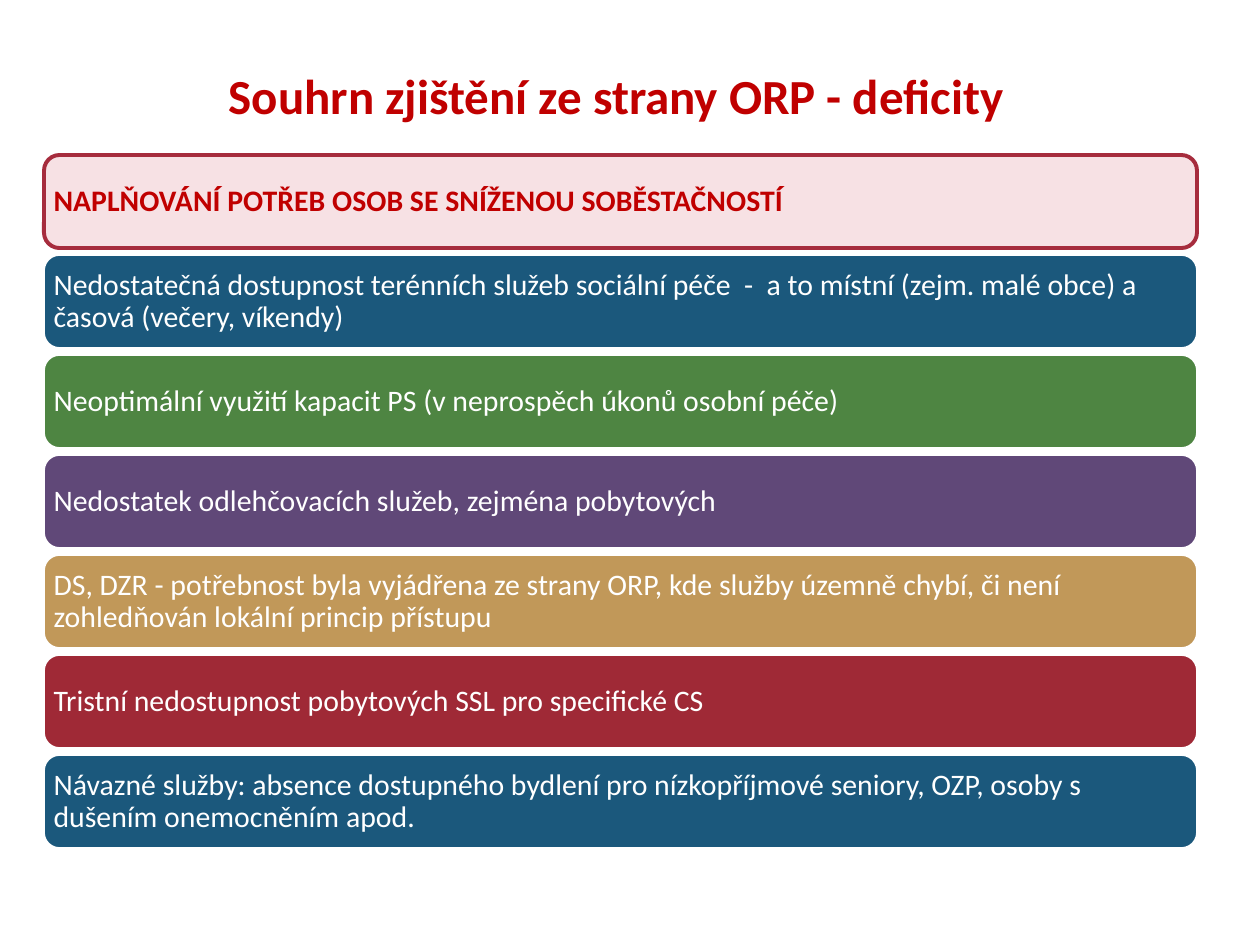
from dataclasses import dataclass

from pptx import Presentation
from pptx.dml.color import RGBColor as Color
from pptx.enum.shapes import MSO_SHAPE as Shape
from pptx.enum.text import MSO_ANCHOR as Anchor, PP_ALIGN as Align
from pptx.util import Emu, Pt

PX_PER_INCH = 126


@dataclass(frozen=True)
class Theme:
    font: str = "Calibri"
    title_size: int = 28
    bar_size: int = 17
    line_spacing: float = 0.9
    accent: str = "C00000"
    white: str = "FFFFFF"
    pink: str = "F7E1E4"
    crimson: str = "A62C3D"
    blue: str = "1B587C"
    green: str = "4E8542"
    purple: str = "604878"
    sand: str = "C19859"
    red: str = "9F2936"


THEME = Theme()

TITLE = "Souhrn zjištění ze strany ORP - deficity"
HEADING = "NAPLŇOVÁNÍ POTŘEB OSOB SE SNÍŽENOU SOBĚSTAČNOSTÍ"
DEFICITS = [
    ("Nedostatečná dostupnost terénních služeb sociální péče  -  a to místní "
     "(zejm. malé obce) a časová (večery, víkendy)", THEME.blue),
    ("Neoptimální využití kapacit PS (v neprospěch úkonů osobní péče)", THEME.green),
    ("Nedostatek odlehčovacích služeb, zejména pobytových", THEME.purple),
    ("DS, DZR - potřebnost byla vyjádřena ze strany ORP, kde služby územně chybí, "
     "či není zohledňován lokální princip přístupu", THEME.sand),
    ("Tristní nedostupnost pobytových SSL pro specifické CS", THEME.red),
    ("Návazné služby: absence dostupného bydlení pro nízkopříjmové seniory, OZP, "
     "osoby s dušením onemocněním apod.", THEME.blue),
]


def px(length):
    return Emu(round(length * 914400 / PX_PER_INCH))


def write(frame, text, size, color, bold, align):
    frame.word_wrap = True
    para = frame.paragraphs[0]
    para.text = text
    para.alignment = align
    para.line_spacing = THEME.line_spacing
    para.font.name = THEME.font
    para.font.size = Pt(size)
    para.font.bold = bold
    para.font.color.rgb = Color.from_string(color)


def add_title(page, left, top, width, height):
    box = page.shapes.add_textbox(px(left), px(top), px(width), px(height))
    box.text_frame.vertical_anchor = Anchor.TOP
    write(box.text_frame, TITLE, THEME.title_size, THEME.accent, True, Align.CENTER)


def add_bar(page, left, top, width, height, text, fill,
            line=THEME.white, line_width=1, color=THEME.white, bold=False):
    bar = page.shapes.add_shape(
        Shape.ROUNDED_RECTANGLE, px(left), px(top), px(width), px(height))
    bar.shadow.inherit = False
    bar.fill.solid()
    bar.fill.fore_color.rgb = Color.from_string(fill)
    bar.line.color.rgb = Color.from_string(line)
    bar.line.width = Pt(line_width)
    frame = bar.text_frame
    frame.margin_left = frame.margin_right = px(5)
    frame.margin_top = frame.margin_bottom = px(5)
    frame.vertical_anchor = Anchor.MIDDLE
    write(frame, text, THEME.bar_size, color, bold, Align.LEFT)


def add_deficits(page, left, top, width, height, gap=7):
    count = len(DEFICITS) + 1
    bar_height = (height - gap * (count - 1)) // count
    add_bar(page, left, top, width, bar_height, HEADING, THEME.pink,
            THEME.crimson, 2.25, THEME.accent, True)
    for row, (text, fill) in enumerate(DEFICITS, start=1):
        add_bar(page, left, top + row * (bar_height + gap), width, bar_height,
                text, fill)


def main():
    deck = Presentation()
    deck.slide_width, deck.slide_height = px(1260), px(945)
    page = deck.slides.add_slide(deck.slide_layouts[6])
    add_title(page, 35, 66, 1162, 128)
    add_deficits(page, 44, 155, 1153, 693)
    deck.save("out.pptx")


if __name__ == "__main__":
    main()
